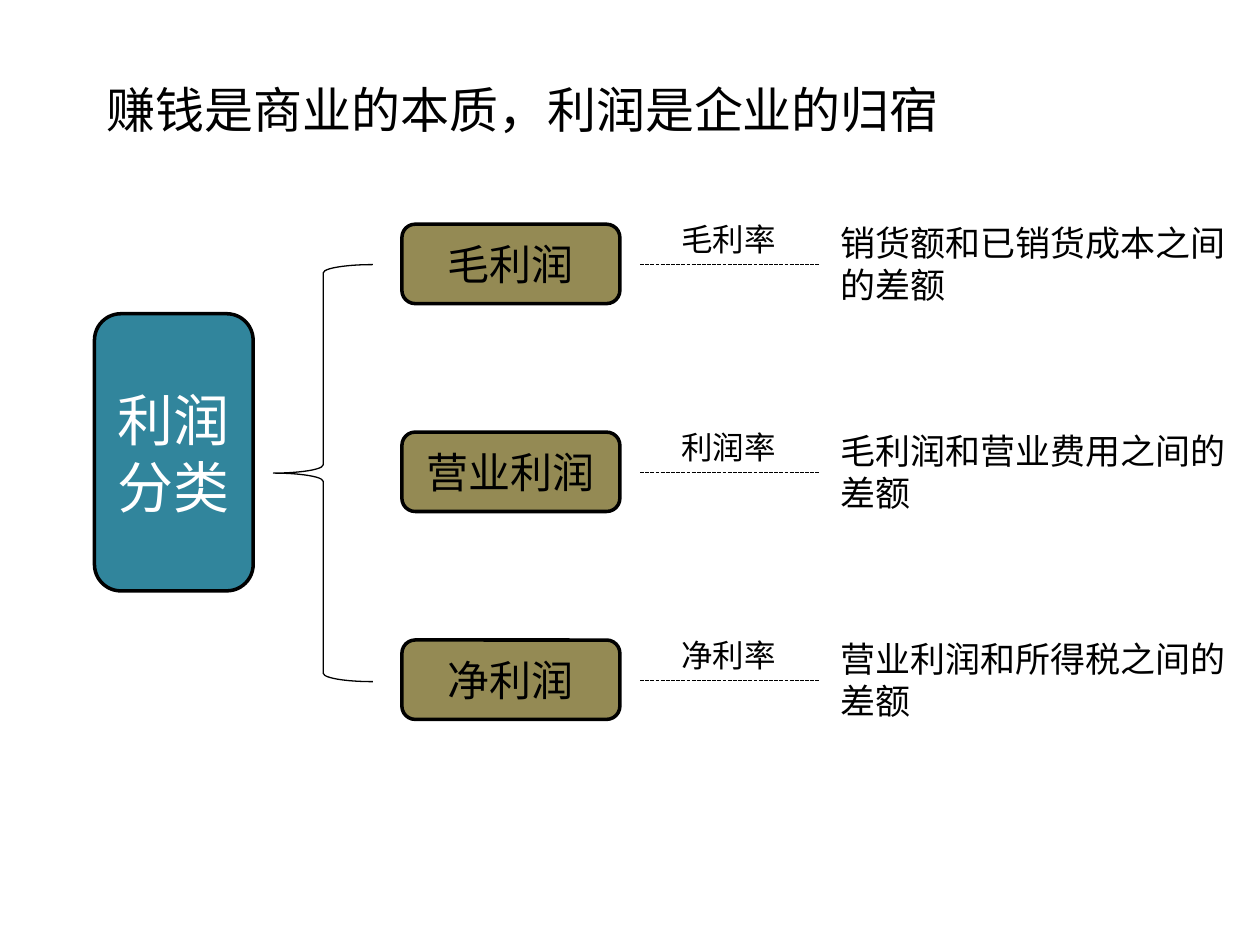
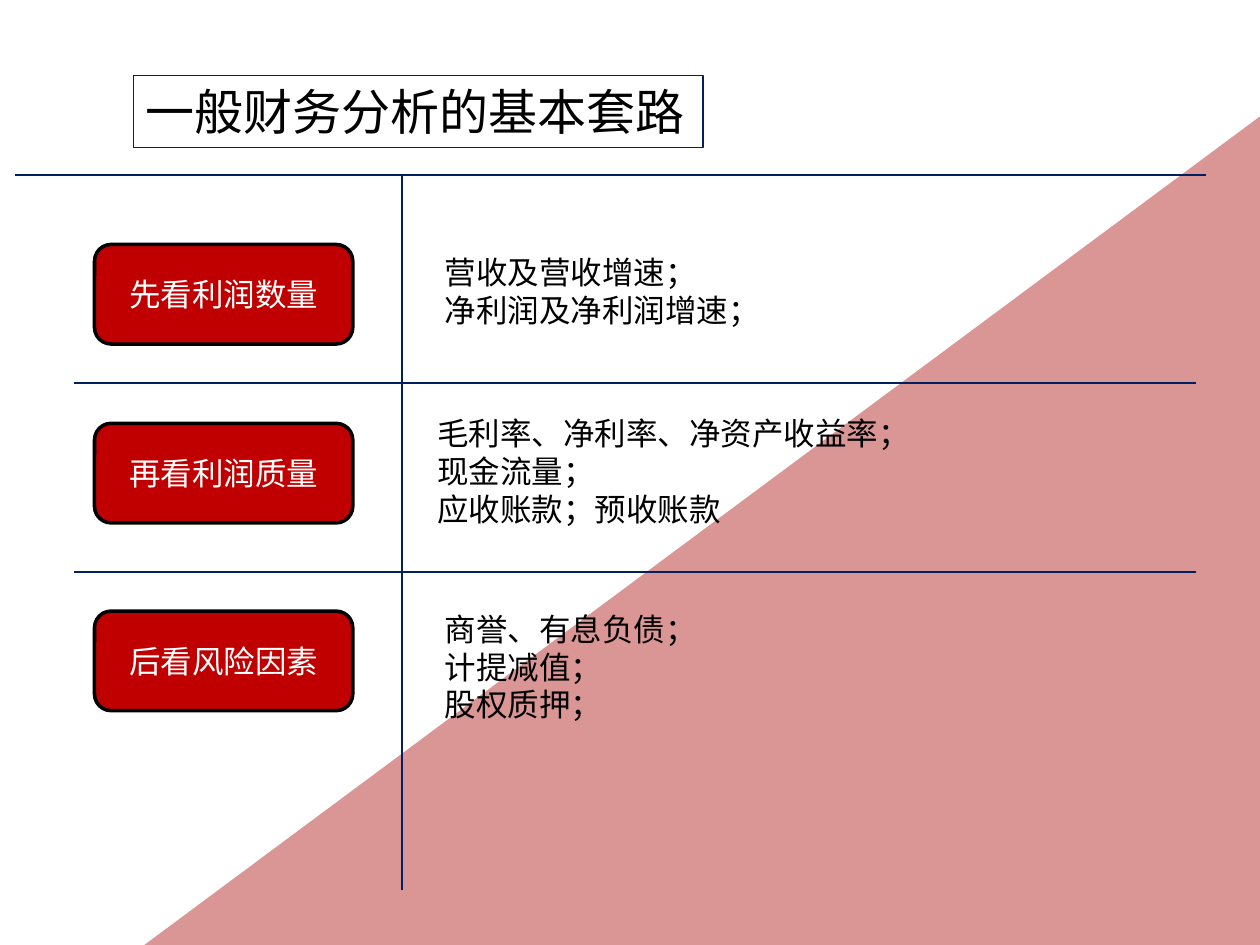
from pptx import Presentation
from pptx.dml.color import RGBColor
from pptx.enum.dml import MSO_LINE as Dash
from pptx.enum.shapes import MSO_CONNECTOR as Conn, MSO_SHAPE as Shape
from pptx.enum.text import MSO_ANCHOR as Anchor, PP_ALIGN as Align
from pptx.oxml import parse_xml
from pptx.oxml.ns import nsdecls, qn
from pptx.util import Inches, Pt
from lxml.etree import SubElement

FONT = "Noto Sans CJK SC"
BLACK, WHITE, NAVY = "000000", "FFFFFF", "002060"
TEAL, OLIVE, RED, PINK = "31859C", "948A54", "C00000", "D99694"

TITLE = "赚钱是商业的本质，利润是企业的归宿"
ROOT = "利润分类"
KINDS = [
    ("毛利润", "毛利率", ["销货额和已销货成本之间", "的差额"]),
    ("营业利润", "利润率", ["毛利润和营业费用之间的", "差额"]),
    ("净利润", "净利率", ["营业利润和所得税之间的", "差额"]),
]
METHOD = "一般财务分析的基本套路"
STEPS = [
    ("先看利润数量", 1.94, (3.43, 1.96, 2.73, 1.31),
     ["营收及营收增速；", "净利润及净利润增速；"]),
    ("再看利润质量", 3.36, (3.37, 3.24, 3.99, 1.62),
     ["毛利率、净利率、净资产收益率；", "现金流量；", "应收账款；预收账款"]),
    ("后看风险因素", 4.85, (3.43, 4.79, 2.22, 1.01),
     ["商誉、有息负债；", "计提减值；", "股权质押；"]),
]
RULES = [
    (0.12, 1.39, 9.57, 1.39),
    (3.19, 1.39, 3.19, 7.06),
    (0.59, 3.04, 9.49, 3.04),
    (0.59, 4.54, 9.49, 4.54),
]
GLOW = (f'<a:effectLst {nsdecls("a")}><a:outerShdw blurRad="50800" dist="38100" '
        'dir="18900000" algn="bl"><a:srgbClr val="000000"><a:alpha val="40000"/>'
        '</a:srgbClr></a:outerShdw></a:effectLst>')


def rgb(code):
    return RGBColor.from_string(code)


def put(obj, vals):
    for key, val in vals.items():
        setattr(obj, key, val)


def write(part, lines, size, hue=BLACK, align=Align.LEFT, wrap=False, glow=False):
    frame = part.text_frame
    frame.word_wrap = wrap
    for num, line in enumerate(lines):
        para = frame.add_paragraph() if num else frame.paragraphs[0]
        put(para, {"alignment": align, "line_spacing": Pt(size * 1.2)})
        run = para.add_run()
        run.text = line
        put(run.font, {"size": Pt(size), "name": FONT})
        run.font.color.rgb = rgb(hue)
        props = run.font._element
        SubElement(props, qn("a:ea"), typeface=FONT)
        if glow:
            props.find(qn("a:solidFill")).addnext(parse_xml(GLOW))


def text(page, area, lines, size, **style):
    part = page.shapes.add_textbox(*map(Inches, area))
    write(part, lines, size, **style)


def shape(page, kind, area, fill=None, edge=BLACK, width=2):
    part = page.shapes.add_shape(kind, *map(Inches, area))
    part.shadow.inherit = False
    if fill:
        part.fill.solid()
        part.fill.fore_color.rgb = rgb(fill)
    else:
        part.fill.background()
    part.line.color.rgb = rgb(edge)
    part.line.width = Pt(width)
    return part


def card(page, area, fill, label, size, hue):
    part = shape(page, Shape.ROUNDED_RECTANGLE, area, fill)
    part.text_frame.vertical_anchor = Anchor.MIDDLE
    write(part, [label], size, hue, Align.CENTER, True)


def rule(page, ends, hue, dash=None):
    line = page.shapes.add_connector(Conn.STRAIGHT, *map(Inches, ends))
    line.line.color.rgb = rgb(hue)
    put(line.line, {"width": Pt(0.75), "dash_style": dash})
    SubElement(line._element.spPr, qn("a:effectLst"))


def profit(page):
    card(page, (0.75, 2.49, 1.26, 2.2), TEAL, ROOT, 32, WHITE)
    shape(page, Shape.LEFT_BRACE, (2.17, 2.1, 0.79, 3.31), width=0.75)
    for row, (name, rate, notes) in enumerate(KINDS):
        mid = 2.1 + 1.65 * row
        card(page, (3.19, mid - 0.32, 1.73, 0.63), OLIVE, name, 24, BLACK)
        rule(page, (5.08, mid, 6.5, mid), BLACK, Dash.SQUARE_DOT)
        text(page, (6.57, mid - 0.39, 3.29, 0.77), notes, 20)
        text(page, (5.31, mid - 0.4, 0.96, 0.4), [rate], 18)
    text(page, (0.75, 0.58, 6.88, 0.57), [TITLE], 28, glow=True)


def method(page):
    wedge = shape(page, Shape.RIGHT_TRIANGLE, (2.28, -0.23, 6.61, 8.9), PINK, PINK)
    wedge.rotation = 270
    for ends in RULES:
        rule(page, ends, NAVY)
    for name, top, area, notes in STEPS:
        card(page, (0.75, top, 2.05, 0.79), RED, name, 18, WHITE)
        text(page, area, notes, 18, wrap=False)
    head = shape(page, Shape.RECTANGLE, (1.06, 0.6, 4.52, 0.57), None, NAVY, 0.75)
    head.text_frame.vertical_anchor = Anchor.TOP
    write(head, [METHOD], 28)


def main():
    deck = Presentation()
    put(deck, {"slide_width": Inches(10), "slide_height": Inches(7.5)})
    for build in (profit, method):
        build(deck.slides.add_slide(deck.slide_layouts[6]))
    deck.save("out.pptx")


if __name__ == "__main__":
    main()
